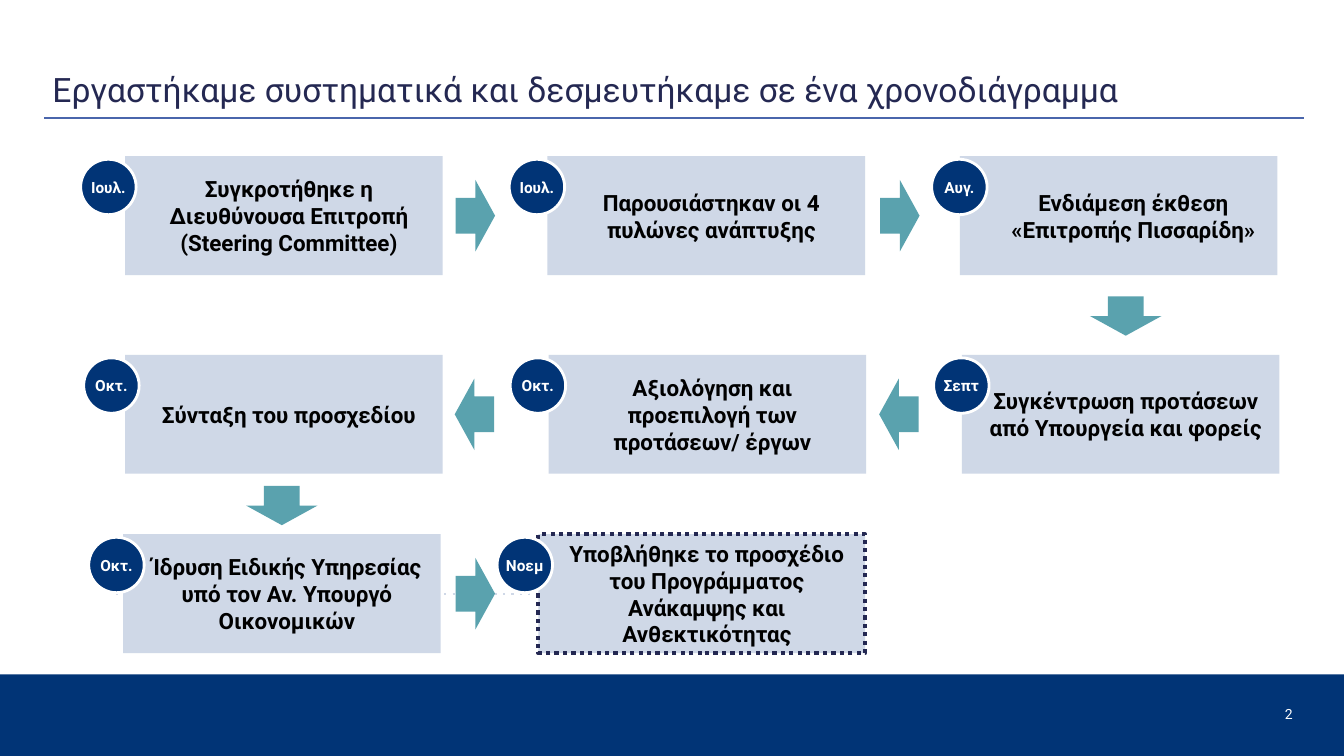
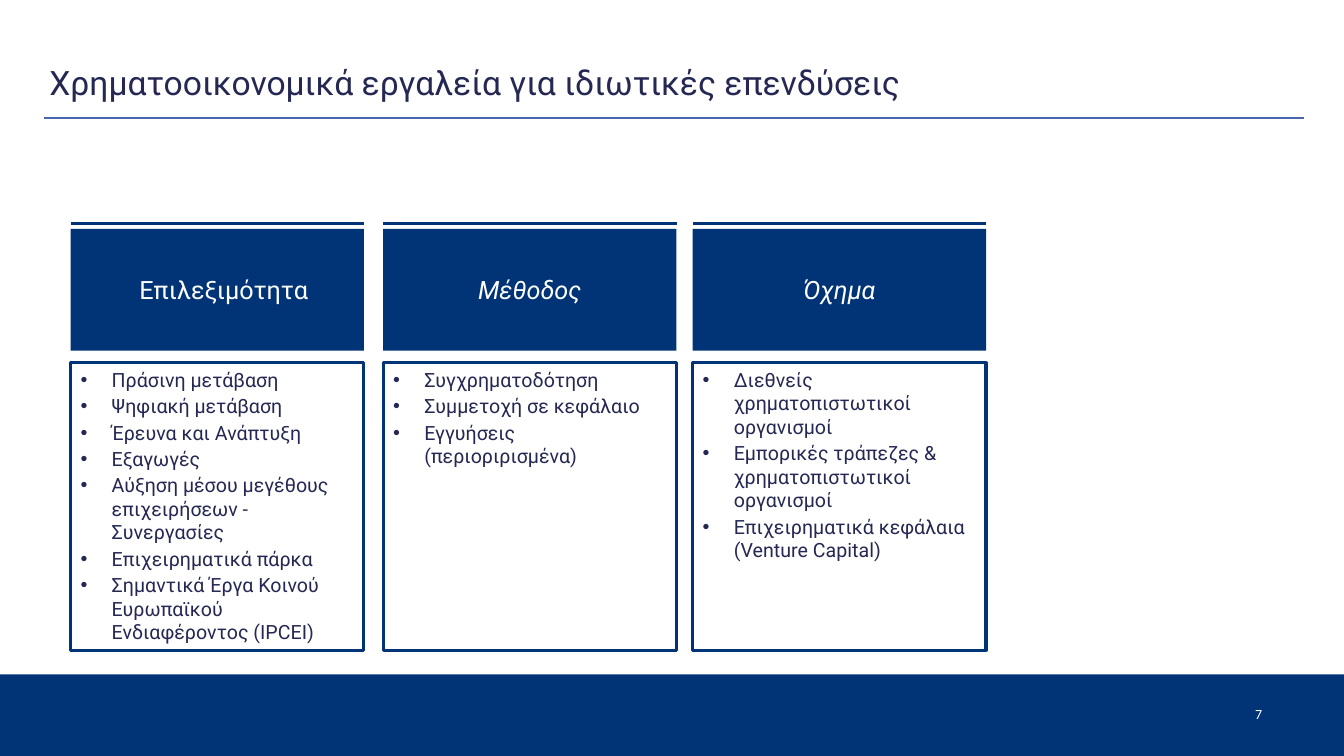
"""Build a two-slide deck on a recovery plan: its timeline and its financing tools."""
from dataclasses import dataclass

from lxml.etree import SubElement
from pptx import Presentation
from pptx.dml.color import RGBColor
from pptx.enum.dml import MSO_LINE
from pptx.enum.shapes import MSO_CONNECTOR, MSO_SHAPE
from pptx.enum.text import MSO_ANCHOR, MSO_AUTO_SIZE, PP_ALIGN
from pptx.oxml.ns import qn
from pptx.presentation import Presentation as Deck
from pptx.shapes.autoshape import Shape
from pptx.shapes.connector import Connector
from pptx.slide import Slide
from pptx.text.text import TextFrame
from pptx.util import Inches, Pt

COLORS = {
    "navy": "013476",
    "ink": "242852",
    "rule": "4A66AC",
    "teal": "5AA2AE",
    "pale": "CFD8E7",
    "white": "FFFFFF",
    "black": "000000",
}
FONT = "Roboto"
ROW_TOPS = (1.55, 3.52, 5.3)
STEP_WIDTH, STEP_HEIGHT = 3.15, 1.18
BADGE_SIZE = 0.55
ARROW_WIDTH, ARROW_HEIGHT = 0.39, 0.71
COLUMN_WIDTH = 2.91


@dataclass(frozen=True)
class TextStyle:
    size: float
    color: str
    bold: bool = False
    italic: bool = False
    font: str = FONT
    align: PP_ALIGN = PP_ALIGN.CENTER
    anchor: MSO_ANCHOR = MSO_ANCHOR.MIDDLE
    insets: tuple[float, float, float, float] = (0.1, 0.1, 0.1, 0.1)
    indent: float = 0
    bullet: bool = False
    space_before: float = 0


@dataclass(frozen=True)
class Step:
    row: int
    left: float
    badge_left: float
    month: str
    lines: tuple[str, ...]
    indent: float = 0


@dataclass(frozen=True)
class Arrow:
    left: float
    top: float
    rotation: float = 0


@dataclass(frozen=True)
class Column:
    left: float
    heading: str
    items: tuple[str, ...]
    italic: bool = True
    indent: float = 0


STEPS = (
    Step(0, 1.24, 0.8, "Ιουλ.", ("Συγκροτήθηκε η Διευθύνουσα Επιτροπή", "(Steering Committee)")),
    Step(0, 5.43, 5.05, "Ιουλ.", ("Παρουσιάστηκαν οι 4 πυλώνες ανάπτυξης",)),
    Step(0, 9.52, 9.24, "Αυγ.", ("Ενδιάμεση έκθεση «Επιτροπής Πισσαρίδη»",), 0.19),
    Step(1, 9.54, 9.26, "Σεπτ", ("Συγκέντρωση προτάσεων από Υπουργεία και φορείς",)),
    Step(1, 5.44, 5.06, "Οκτ.", ("Αξιολόγηση και προεπιλογή των προτάσεων/ έργων",)),
    Step(1, 1.24, 0.83, "Οκτ.", ("Σύνταξη του προσχεδίου",)),
    Step(2, 1.22, 0.88, "Οκτ.", ("Ίδρυση Ειδικής Υπηρεσίας υπό τον Αν. Υπουργό Οικονομικών",)),
)
FINAL_STEP = Step(
    2, 5.34, 4.93, "Νοεμ",
    ("Υποβλήθηκε το προσχέδιο του Προγράμματος Ανάκαμψης και Ανθεκτικότητας",),
)
ARROW_OFFSET = (STEP_HEIGHT - ARROW_HEIGHT) / 2
ARROWS = (
    Arrow(4.52, ROW_TOPS[0] + ARROW_OFFSET),
    Arrow(8.73, ROW_TOPS[0] + ARROW_OFFSET),
    Arrow(10.97, 2.78, 90),
    Arrow(8.72, ROW_TOPS[1] + ARROW_OFFSET, 180),
    Arrow(4.51, ROW_TOPS[1] + ARROW_OFFSET, 180),
    Arrow(2.6, 4.66, 90),
    Arrow(4.52, ROW_TOPS[2] + ARROW_OFFSET),
)
COLUMNS = (
    Column(0.7, "Επιλεξιμότητα", (
        "Πράσινη μετάβαση",
        "Ψηφιακή μετάβαση",
        "Έρευνα και Ανάπτυξη",
        "Εξαγωγές",
        "Αύξηση μέσου μεγέθους επιχειρήσεων - Συνεργασίες",
        "Επιχειρηματικά πάρκα",
        "Σημαντικά Έργα Κοινού Ευρωπαϊκού Ενδιαφέροντος (IPCEI)",
    ), italic=False, indent=0.13),
    Column(3.8, "Μέθοδος", (
        "Συγχρηματοδότηση",
        "Συμμετοχή σε κεφάλαιο",
        "Εγγυήσεις (περιοριρισμένα)",
    )),
    Column(6.87, "Όχημα", (
        "Διεθνείς χρηματοπιστωτικοί οργανισμοί",
        "Εμπορικές τράπεζες & χρηματοπιστωτικοί οργανισμοί",
        "Επιχειρηματικά κεφάλαια (Venture Capital)",
    )),
)
TITLE_STYLE = TextStyle(24, "ink", align=PP_ALIGN.LEFT, anchor=MSO_ANCHOR.TOP)
BADGE_STYLE = TextStyle(11, "white", bold=True, insets=(0, 0, 0, 0))
LIST_STYLE = TextStyle(
    14, "ink", align=PP_ALIGN.LEFT, anchor=MSO_ANCHOR.TOP,
    insets=(0.1, 0.05, 0.1, 0.05), indent=0.31, bullet=True, space_before=2,
)


def rgb(color: str) -> RGBColor:
    return RGBColor.from_string(COLORS[color])


def write_text(frame: TextFrame, lines: tuple[str, ...], style: TextStyle) -> None:
    frame.word_wrap = True
    frame.auto_size = MSO_AUTO_SIZE.NONE
    frame.vertical_anchor = style.anchor
    left, top, right, bottom = style.insets
    frame.margin_left, frame.margin_top = Inches(left), Inches(top)
    frame.margin_right, frame.margin_bottom = Inches(right), Inches(bottom)
    for index, line in enumerate(lines):
        paragraph = frame.add_paragraph() if index else frame.paragraphs[0]
        properties = paragraph._p.get_or_add_pPr()
        if style.indent:
            properties.set("marL", str(Inches(style.indent)))
        if style.bullet:
            properties.set("indent", str(-Inches(style.indent)))
            SubElement(properties, qn("a:buFont")).set("typeface", "Arial")
            SubElement(properties, qn("a:buChar")).set("char", "•")
        paragraph.alignment = style.align
        paragraph.space_before = Pt(style.space_before if index else 0)
        run = paragraph.add_run()
        run.text = line
        run.font.name = style.font
        run.font.size = Pt(style.size)
        run.font.bold = style.bold
        run.font.italic = style.italic
        run.font.color.rgb = rgb(style.color)


def add_block(
    slide: Slide, kind: MSO_SHAPE, left: float, top: float, width: float, height: float,
    fill: str, line: str | None = None, line_width: float = 1,
) -> Shape:
    shape = slide.shapes.add_shape(kind, Inches(left), Inches(top), Inches(width), Inches(height))
    shape.shadow.inherit = False
    shape.fill.solid()
    shape.fill.fore_color.rgb = rgb(fill)
    if line:
        shape.line.color.rgb = rgb(line)
        shape.line.width = Pt(line_width)
    else:
        shape.line.fill.background()
    return shape


def add_rule(
    slide: Slide, left: float, right: float, top: float, color: str, width: float,
) -> Connector:
    connector = slide.shapes.add_connector(
        MSO_CONNECTOR.STRAIGHT, Inches(left), Inches(top), Inches(right), Inches(top)
    )
    connector.line.color.rgb = rgb(color)
    connector.line.width = Pt(width)
    SubElement(connector._element.spPr, qn("a:effectLst"))
    return connector


def add_base_slide(
    presentation: Deck, title: str, left: float, top: float, number: str, number_style: TextStyle,
) -> Slide:
    slide = presentation.slides.add_slide(presentation.slide_layouts[5])
    add_block(slide, MSO_SHAPE.RECTANGLE, 0, 6.69, 13.33, 0.81, "navy")
    add_rule(slide, 0.44, 12.93, 1.17, "rule", 1)
    heading = slide.shapes.title
    heading.left, heading.top = Inches(left), Inches(top)
    heading.width, heading.height = Inches(12.91), Inches(0.84)
    write_text(heading.text_frame, (title,), TITLE_STYLE)
    number_box = slide.shapes.add_textbox(Inches(12.35), Inches(6.8), Inches(0.57), Inches(0.57))
    write_text(number_box.text_frame, (number,), number_style)
    return slide


def add_step(slide: Slide, step: Step, final: bool = False) -> Shape:
    top = ROW_TOPS[step.row]
    width = 3.24 if final else STEP_WIDTH
    box = add_block(
        slide, MSO_SHAPE.RECTANGLE, step.left, top, width, STEP_HEIGHT,
        "pale", "ink" if final else None, 3,
    )
    if final:
        box.line.dash_style = MSO_LINE.ROUND_DOT
    style = TextStyle(16, "black", bold=True, insets=(0.2, 0.1, 0.1, 0.1), indent=step.indent)
    write_text(box.text_frame, step.lines, style)
    badge = add_block(
        slide, MSO_SHAPE.OVAL, step.badge_left, top + 0.03, BADGE_SIZE, BADGE_SIZE,
        "navy", "white", 2,
    )
    write_text(badge.text_frame, (step.month,), BADGE_STYLE)
    return box


def add_arrow(slide: Slide, arrow: Arrow) -> None:
    shape = add_block(
        slide, MSO_SHAPE.RIGHT_ARROW, arrow.left, arrow.top, ARROW_WIDTH, ARROW_HEIGHT, "teal"
    )
    shape.rotation = arrow.rotation


def add_column(slide: Slide, column: Column) -> None:
    add_rule(slide, column.left, column.left + COLUMN_WIDTH, 2.22, "navy", 2.25)
    header = add_block(slide, MSO_SHAPE.RECTANGLE, column.left, 2.27, COLUMN_WIDTH, 1.21, "navy")
    style = TextStyle(
        18, "white", italic=column.italic, insets=(0.1, 0.05, 0.1, 0.05), indent=column.indent
    )
    write_text(header.text_frame, (column.heading,), style)
    body = add_block(
        slide, MSO_SHAPE.RECTANGLE, column.left, 3.6, COLUMN_WIDTH, 2.85, "white", "navy", 2.25
    )
    write_text(body.text_frame, column.items, LIST_STYLE)


def build_timeline(presentation: Deck) -> None:
    slide = add_base_slide(
        presentation, "Εργαστήκαμε συστηματικά και δεσμευτήκαμε σε ένα χρονοδιάγραμμα",
        0.42, 0.58, "2", TextStyle(10, "white", align=PP_ALIGN.RIGHT),
    )
    track = add_rule(slide, 1.15, 8.58, 5.89, "pale", 1.5)
    track.line.dash_style = MSO_LINE.SQUARE_DOT
    line_properties = track.line._get_or_add_ln()
    line_properties.find(qn("a:prstDash")).set("val", "dot")
    SubElement(line_properties, qn("a:tailEnd")).set("type", "triangle")
    for arrow in ARROWS:
        add_arrow(slide, arrow)
    for step in STEPS:
        add_step(slide, step)
    final_box = add_step(slide, FINAL_STEP, final=True)
    track.end_connect(final_box, 3)


def build_tools(presentation: Deck) -> None:
    slide = add_base_slide(
        presentation, "Χρηματοοικονομικά εργαλεία για ιδιωτικές επενδύσεις",
        0.39, 0.51, "7", TextStyle(10, "white", font="Calibri", align=PP_ALIGN.LEFT),
    )
    for column in COLUMNS:
        add_column(slide, column)


def main() -> None:
    presentation = Presentation()
    presentation.slide_width = Inches(13.33)
    presentation.slide_height = Inches(7.5)
    build_timeline(presentation)
    build_tools(presentation)
    presentation.save("out.pptx")


if __name__ == "__main__":
    main()
